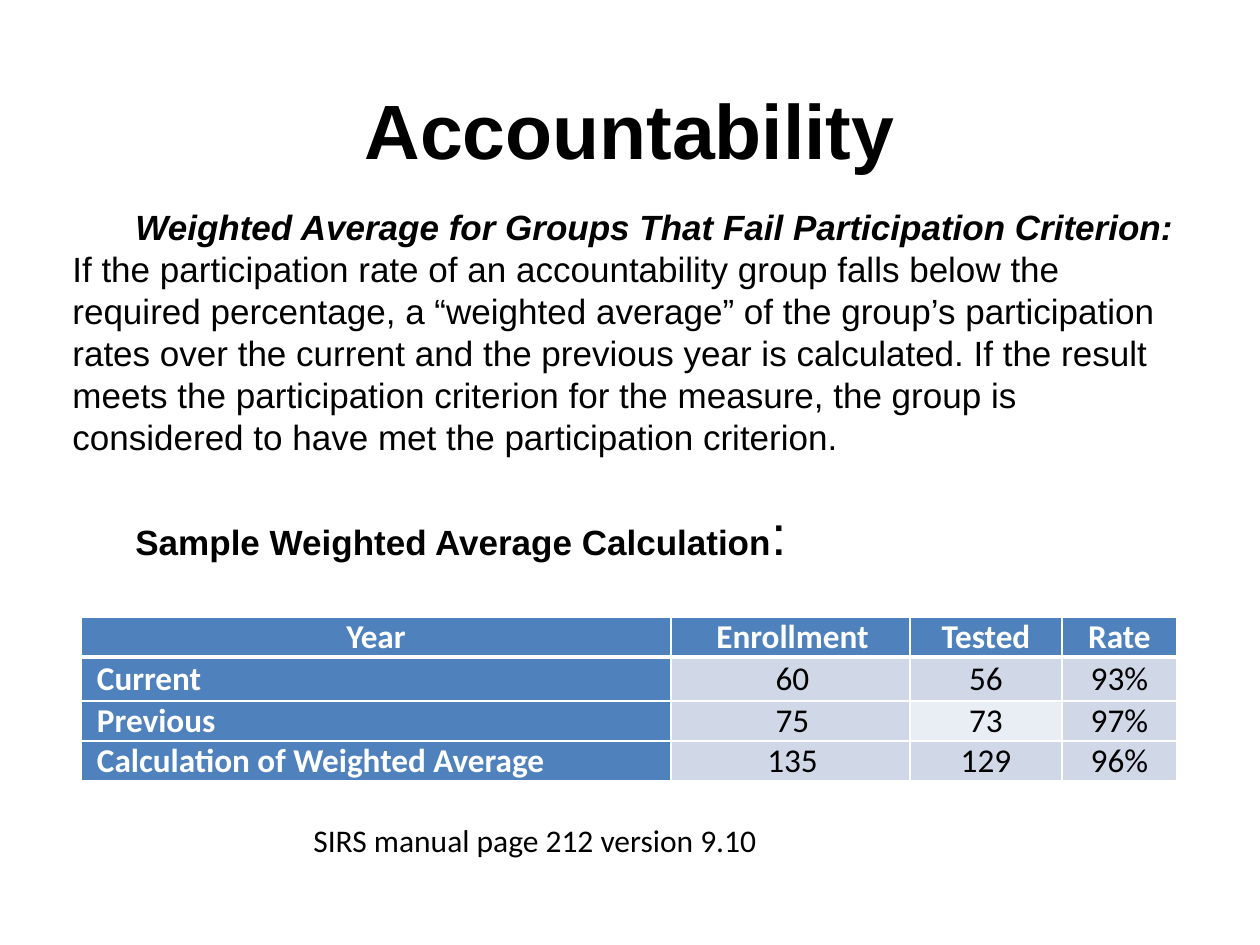
from dataclasses import dataclass

from lxml import etree
from pptx import Presentation
from pptx import util as u
from pptx.dml import color
from pptx.enum import text
from pptx.oxml import ns

PX_PER_INCH = 126
ALIGN = text.PP_ALIGN
MIDDLE = text.MSO_ANCHOR.MIDDLE


@dataclass(frozen=True)
class Theme:
    black: str = "000000"
    white: str = "FFFFFF"
    header: str = "4F81BD"
    band: str = "D0D8E8"
    light_band: str = "E9EDF4"
    heading_font: str = "Arial"
    table_font: str = "Calibri"
    title_size: int = 44
    body_size: int = 20
    colon_size: int = 32
    table_size: int = 19
    caption_size: int = 18


THEME = Theme()


@dataclass(frozen=True)
class Run:
    words: str
    size: int
    font: str = THEME.heading_font
    color: str = THEME.black
    bold: bool = False
    italic: bool = False


@dataclass(frozen=True)
class Paragraph:
    runs: tuple[Run, ...]
    align: ALIGN = ALIGN.LEFT
    first_indent: int = 0
    left_margin: int = 0
    line_points: int = 0
    before_points: int = 0


@dataclass(frozen=True)
class TextBlock:
    left: int
    top: int
    width: int
    height: int
    paragraphs: tuple[Paragraph, ...]
    anchor: text.MSO_ANCHOR = MIDDLE


TITLE = TextBlock(63, 50, 1134, 158, (
    Paragraph((Run("Accountability", THEME.title_size, bold=True),), ALIGN.CENTER),
))

CAPTION = TextBlock(301, 815, 630, 89, (
    Paragraph((Run("SIRS manual page 212 version 9.10", THEME.caption_size, THEME.table_font),)),
), text.MSO_ANCHOR.TOP)

BODY = TextBlock(60, 197, 1137, 378, (
    Paragraph((
        Run("Weighted Average for Groups That Fail Participation Criterion:",
            THEME.body_size, bold=True, italic=True),
        Run(" If the participation rate of an accountability group falls below the "
            "required percentage, a “weighted average” of the group’s participation "
            "rates over the current and the previous year is calculated. If the result "
            "meets the participation criterion for the measure, the group is "
            "considered to have met the participation criterion.", THEME.body_size),
    ), first_indent=63, line_points=24),
    Paragraph((
        Run("Sample Weighted Average Calculation", THEME.body_size, bold=True),
        Run(":", THEME.colon_size),
    ), first_indent=63, before_points=24),
))

TABLE_LEFT, TABLE_TOP = 81, 617
COLUMN_WIDTHS = (590, 239, 152, 115)
ROW_HEIGHTS = (40, 44, 40, 40)
CELL_INSET = 16
ENROLLMENT_MARGIN = 4
ROWS = (
    ("Year", "Enrollment", "Tested", "Rate"),
    ("Current", "60", "56", "93%"),
    ("Previous", "75", "73", "97%"),
    ("Calculation of Weighted Average", "135", "129", "96%"),
)
LIGHT_CELL = (2, 2)


def px(length: int) -> u.Emu:
    return u.Emu(round(length * 914400 / PX_PER_INCH))


def rgb(value: str) -> color.RGBColor:
    return color.RGBColor.from_string(value)


def add_run(paragraph, run: Run) -> None:
    piece = paragraph.add_run()
    piece.text = run.words
    piece.font.name = run.font
    piece.font.size = u.Pt(run.size)
    piece.font.bold = run.bold
    piece.font.italic = run.italic
    piece.font.color.rgb = rgb(run.color)


def write_paragraph(paragraph, content: Paragraph) -> None:
    paragraph.alignment = content.align
    properties = paragraph._p.get_or_add_pPr()
    properties.set("marL", str(px(content.left_margin)))
    properties.set("indent", str(px(content.first_indent)))
    if content.line_points:
        paragraph.line_spacing = u.Pt(content.line_points)
    if content.before_points:
        paragraph.space_before = u.Pt(content.before_points)
    for run in content.runs:
        add_run(paragraph, run)


def add_text(slide, block: TextBlock) -> None:
    shape = slide.shapes.add_textbox(px(block.left), px(block.top), px(block.width), px(block.height))
    frame = shape.text_frame
    frame.word_wrap = True
    frame.vertical_anchor = block.anchor
    for index, content in enumerate(block.paragraphs):
        paragraph = frame.add_paragraph() if index else frame.paragraphs[0]
        write_paragraph(paragraph, content)


def set_border(cell, side: str, points: int) -> None:
    line = etree.SubElement(cell._tc.get_or_add_tcPr(), ns.qn(f"a:ln{side}"), w=str(u.Pt(points)))
    fill = etree.SubElement(line, ns.qn("a:solidFill"))
    etree.SubElement(fill, ns.qn("a:srgbClr"), val=THEME.white)


def cell_fill(row: int, column: int) -> str:
    if row == 0 or column == 0:
        return THEME.header
    return THEME.light_band if (row, column) == LIGHT_CELL else THEME.band


def write_cell(cell, row: int, column: int, words: str) -> None:
    heading = row == 0 or column == 0
    thick_side = {0: "B", 1: "T"}.get(row)
    for side in "LRTB":
        set_border(cell, side, 3 if side == thick_side else 1)
    cell.fill.solid()
    cell.fill.fore_color.rgb = rgb(cell_fill(row, column))
    cell.vertical_anchor = MIDDLE
    cell.margin_left = cell.margin_right = px(CELL_INSET)
    cell.margin_top = cell.margin_bottom = 0
    run = Run(words, THEME.table_size, THEME.table_font,
              THEME.white if heading else THEME.black, bold=heading)
    align = ALIGN.LEFT if row and column == 0 else ALIGN.CENTER
    margin = ENROLLMENT_MARGIN if column == 1 else 0
    write_paragraph(cell.text_frame.paragraphs[0], Paragraph((run,), align, left_margin=margin))


def add_results_table(slide) -> None:
    table = slide.shapes.add_table(
        len(ROWS), len(COLUMN_WIDTHS), px(TABLE_LEFT), px(TABLE_TOP),
        px(sum(COLUMN_WIDTHS)), px(sum(ROW_HEIGHTS))).table
    table.horz_banding = False
    for column, width in zip(table.columns, COLUMN_WIDTHS):
        column.width = px(width)
    for table_row, height in zip(table.rows, ROW_HEIGHTS):
        table_row.height = px(height)
    for row, values in enumerate(ROWS):
        for column, words in enumerate(values):
            write_cell(table.cell(row, column), row, column, words)


def main() -> None:
    presentation = Presentation()
    presentation.slide_width = px(1260)
    presentation.slide_height = px(945)
    slide = presentation.slides.add_slide(presentation.slide_layouts[6])
    add_text(slide, TITLE)
    add_text(slide, CAPTION)
    add_results_table(slide)
    add_text(slide, BODY)
    presentation.save("out.pptx")


if __name__ == "__main__":
    main()
